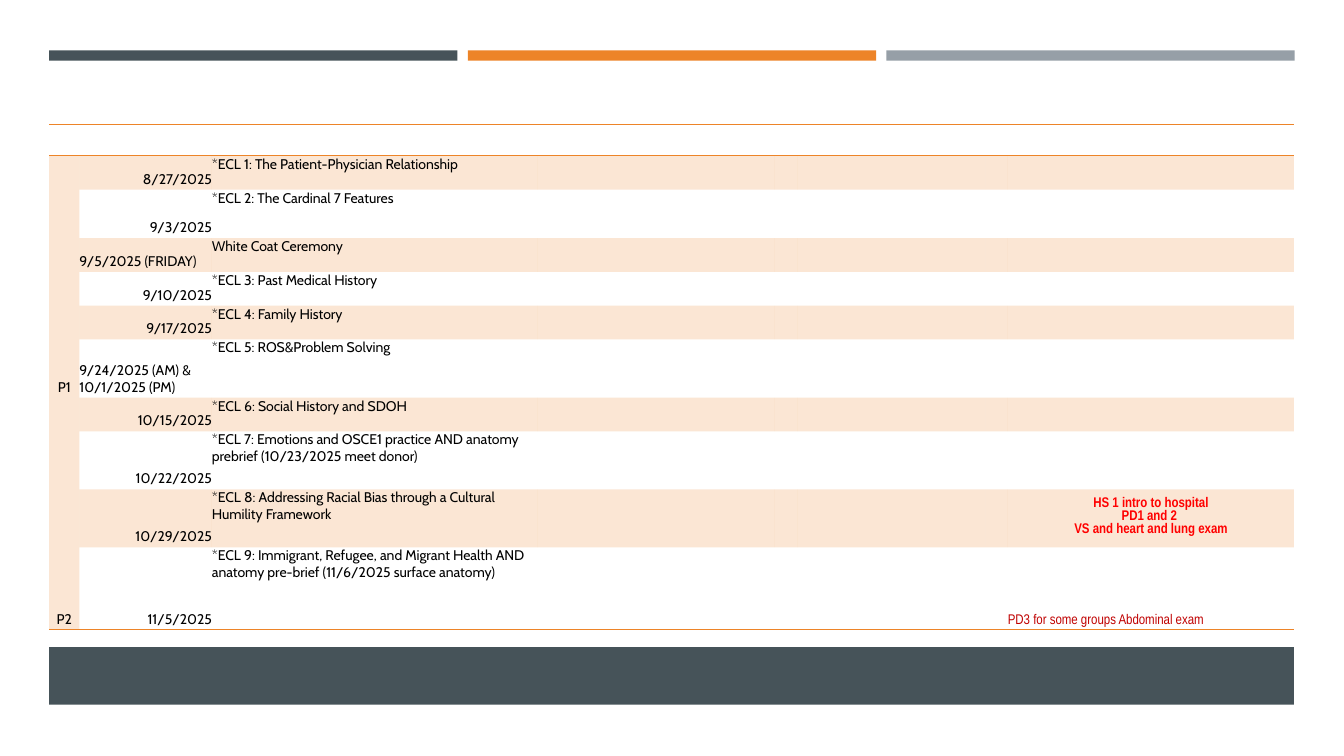
from lxml import etree
from pptx import Presentation
from pptx.dml.color import RGBColor
from pptx.enum.shapes import MSO_SHAPE
from pptx.enum.text import MSO_ANCHOR, PP_ALIGN
from pptx.oxml.ns import qn
from pptx.util import Cm, Pt

RECTANGLE = MSO_SHAPE.RECTANGLE
TOP, MIDDLE, BOTTOM = MSO_ANCHOR.TOP, MSO_ANCHOR.MIDDLE, MSO_ANCHOR.BOTTOM
LEFT, CENTER, RIGHT = PP_ALIGN.LEFT, PP_ALIGN.CENTER, PP_ALIGN.RIGHT

WHITE = RGBColor(0xFF, 0xFF, 0xFF)
BLACK = RGBColor(0x00, 0x00, 0x00)
SLATE = RGBColor(0x46, 0x53, 0x59)
ORANGE = RGBColor(0xED, 0x84, 0x28)
GREY = RGBColor(0x96, 0x9F, 0xA7)
RED = RGBColor(0xFF, 0x00, 0x00)
DARK_RED = RGBColor(0xC0, 0x00, 0x00)

NO_STYLE = "{2D5ABB26-0587-4C30-8999-92F81FD0307C}"
MARGIN, CONTENT_WIDTH = 1.24, 31.37
COLUMN_WIDTHS = [0.76, 3.34, 8.2, 5.99, 0.56, 4.75, 0.56, 7.21]
HEADER_HEIGHT = 0.78

# Row height in cm, date, date alignment, session
SESSIONS = [
    (0.86, "8/27/2025", RIGHT, "*ECL 1: The Patient-Physician Relationship"),
    (1.22, "9/3/2025", RIGHT, "*ECL 2: The Cardinal 7 Features"),
    (0.85, "9/5/2025 (FRIDAY)", LEFT, "White Coat Ceremony"),
    (0.85, "9/10/2025", RIGHT, "*ECL 3: Past Medical History"),
    (0.85, "9/17/2025", RIGHT, "*ECL 4: Family History"),
    (1.47, "9/24/2025 (AM) & 10/1/2025 (PM)", LEFT, "*ECL 5: ROS&Problem Solving"),
    (0.85, "10/15/2025", RIGHT, "*ECL 6: Social History and SDOH"),
    (1.46, "10/22/2025", RIGHT, "*ECL 7: Emotions and OSCE1 practice AND anatomy "
     "prebrief (10/23/2025 meet donor)"),
    (1.46, "10/29/2025", RIGHT, "*ECL 8: Addressing Racial Bias through a Cultural "
     "Humility Framework"),
    (2.08, "11/5/2025", RIGHT, "*ECL 9: Immigrant, Refugee, and Migrant Health AND "
     "anatomy pre-brief (11/6/2025 surface anatomy)"),
]
# Phase, first row, last row
PHASES = [("P1", 1, 6), ("P2", 7, 10)]
HOSPITAL_NOTE = "HS 1 intro to hospital\nPD1 and 2 \nVS and heart and lung exam"
ABDOMINAL_NOTE = "PD3 for some groups Abdominal exam"


def add_bar(slide, left, top, width, height, color):
    bar = slide.shapes.add_shape(RECTANGLE, Cm(left), Cm(top), Cm(width), Cm(height))
    bar.shadow.inherit = False
    bar.fill.solid()
    bar.fill.fore_color.rgb = color
    bar.line.fill.background()


def write_cell(cell, text, align=LEFT, anchor=BOTTOM, font="Cabin", color=BLACK,
               bold=False):
    cell.text_frame.text = text
    cell.vertical_anchor = anchor
    for paragraph in cell.text_frame.paragraphs:
        paragraph.alignment = align
        for run in paragraph.runs:
            run.font.name = font
            run.font.size = Pt(10)
            run.font.bold = bold
            run.font.color.rgb = color


def reset_cell(cell):
    cell.margin_left = cell.margin_right = cell.margin_top = 0
    cell.margin_bottom = Cm(0.05)
    # Small type in empty cells keeps the rows at their set height
    cell.text_frame.paragraphs[0]._p.get_or_add_endParaRPr().set("sz", "1000")
    cell.fill.background()


def tint_cell(cell):
    cell.fill.solid()
    cell.fill.fore_color.rgb = ORANGE
    color = cell._tc.tcPr.find(qn("a:solidFill"))[0]
    etree.SubElement(color, qn("a:alpha"), val="20000")


def rule_cell(cell, *sides):
    properties = cell._tc.get_or_add_tcPr()
    for position, side in enumerate(sides):
        border = etree.Element(qn(f"a:{side}"), w=str(Pt(1)))
        fill = etree.SubElement(border, qn("a:solidFill"))
        etree.SubElement(fill, qn("a:srgbClr"), val=str(ORANGE))
        properties.insert(position, border)


def add_schedule(slide):
    row_heights = [HEADER_HEIGHT] + [session[0] for session in SESSIONS]
    schedule = slide.shapes.add_table(
        len(row_heights), len(COLUMN_WIDTHS), Cm(MARGIN), Cm(3.14),
        Cm(CONTENT_WIDTH), Cm(sum(row_heights))).table
    schedule.first_row = schedule.horz_banding = False
    schedule._tbl.tblPr.find(qn("a:tableStyleId")).text = NO_STYLE
    for column, width in zip(schedule.columns, COLUMN_WIDTHS):
        column.width = Cm(width)
    for row, height in zip(schedule.rows, row_heights):
        row.height = Cm(height)

    # Tinted phase column and odd rows, ruled header and last row
    last_row = len(SESSIONS)
    for row_index, row in enumerate(schedule.rows):
        for column_index, cell in enumerate(row.cells):
            reset_cell(cell)
            if row_index and (row_index % 2 or column_index == 0):
                tint_cell(cell)
            if row_index == 0:
                rule_cell(cell, "lnT", "lnB")
            elif row_index == last_row:
                rule_cell(cell, "lnB")

    # Dates and sessions
    for row_index, (_, date, align, session) in enumerate(SESSIONS, start=1):
        write_cell(schedule.cell(row_index, 1), date, align)
        write_cell(schedule.cell(row_index, 2), session, anchor=TOP)

    # Phases
    for phase, first, last in PHASES:
        phase_cell = schedule.cell(first, 0)
        phase_cell.merge(schedule.cell(last, 0))
        write_cell(phase_cell, phase, CENTER)
    rule_cell(phase_cell, "lnB")

    # Exam notes
    write_cell(schedule.cell(9, 7), HOSPITAL_NOTE, CENTER, MIDDLE,
               "Arial Narrow", RED, bold=True)
    write_cell(schedule.cell(10, 7), ABDOMINAL_NOTE, font="Arial Narrow", color=DARK_RED)


def main():
    presentation = Presentation()
    presentation.slide_width, presentation.slide_height = Cm(33.87), Cm(19.05)
    slide = presentation.slides.add_slide(presentation.slide_layouts[6])

    # Backdrop, top stripes and footer band
    add_bar(slide, 0, 0, 33.87, 19.05, WHITE)
    for index, color in enumerate([SLATE, ORANGE, GREY]):
        add_bar(slide, MARGIN + index * 10.55, 1.27, 10.29, 0.26, color)
    add_bar(slide, MARGIN, 16.31, CONTENT_WIDTH, 1.45, SLATE)

    add_schedule(slide)
    presentation.save("out.pptx")


if __name__ == "__main__":
    main()
